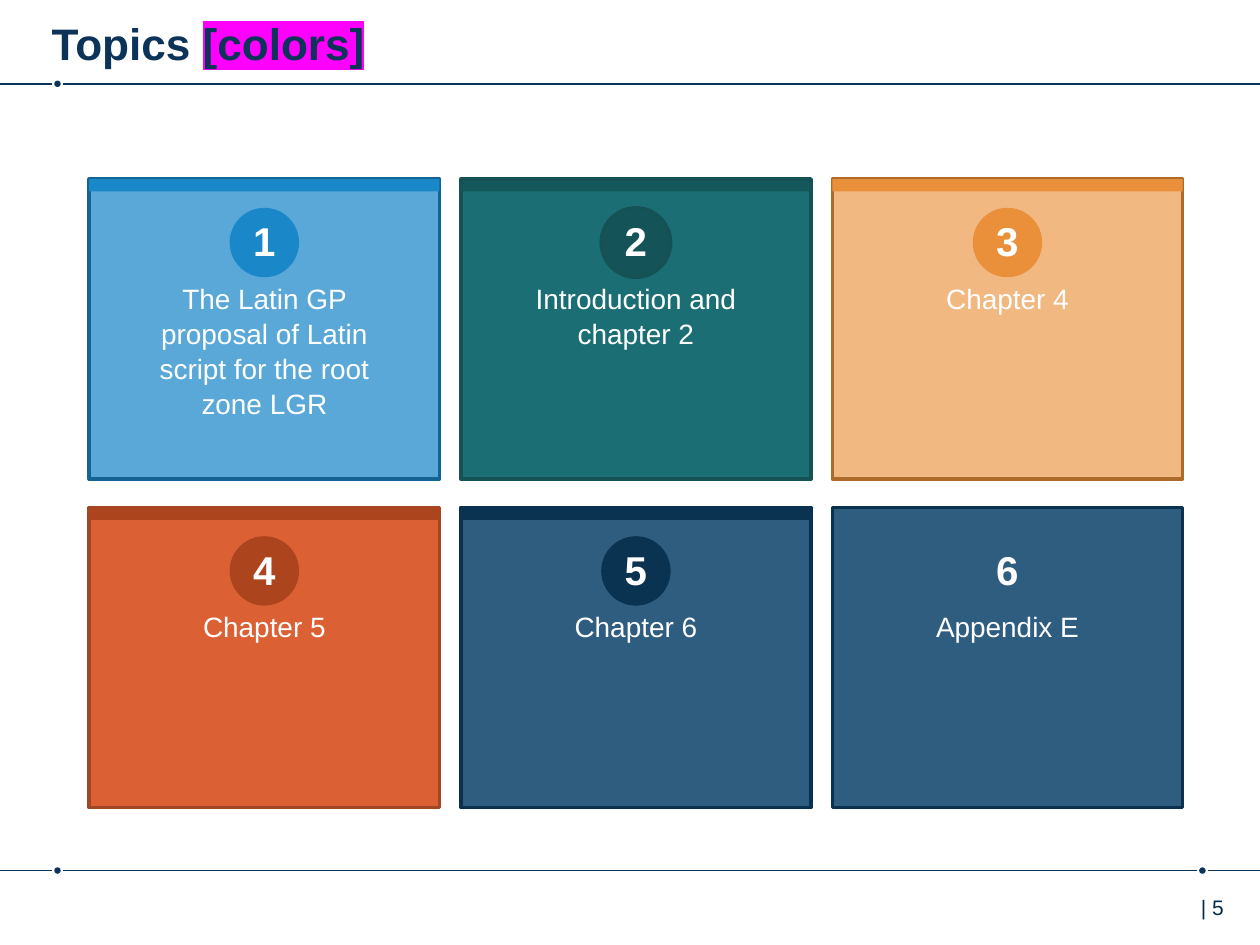
from lxml import etree
from pptx import Presentation
from pptx import util as u
from pptx.dml.color import RGBColor
from pptx.enum import shapes, text
from pptx.oxml.ns import qn

NAVY = RGBColor(0x0C, 0x34, 0x58)
PAGE_INK = RGBColor(0x00, 0x2B, 0x49)
WHITE = RGBColor(0xFF, 0xFF, 0xFF)
BLUE = RGBColor(0x1A, 0x87, 0xC9)
BLUE_EDGE = RGBColor(0x13, 0x64, 0x95)
TEAL = RGBColor(0x1B, 0x6F, 0x74)
TEAL_DARK = RGBColor(0x14, 0x53, 0x57)
TEAL_EDGE = RGBColor(0x14, 0x52, 0x56)
ORANGE = RGBColor(0xEA, 0x90, 0x3A)
ORANGE_EDGE = RGBColor(0xAD, 0x6B, 0x2B)
RED = RGBColor(0xDB, 0x60, 0x33)
RED_DARK = RGBColor(0xAC, 0x44, 0x1E)
RED_EDGE = RGBColor(0xA2, 0x47, 0x26)
STEEL = RGBColor(0x0D, 0x43, 0x6C)
STEEL_DARK = RGBColor(0x0A, 0x32, 0x51)
STEEL_EDGE = RGBColor(0x0A, 0x32, 0x50)

RECTANGLE = shapes.MSO_SHAPE.RECTANGLE
OVAL = shapes.MSO_SHAPE.OVAL

COLUMNS = 3
LEFT, TOP = 1.8, 3.61
PITCH_X, PITCH_Y = 7.49, 6.62
CARD_W, CARD_H = 7.06, 6.05
BAR_H, BADGE = 0.25, 1.4
LABEL_W = 5.76

# label, fill, fill opacity, edge, accent, accent bar opacity, badge edge
CARDS = [
    ("The Latin GP proposal of Latin script for the root zone LGR",
     BLUE, 72, BLUE_EDGE, BLUE, 100, None),
    ("Introduction and chapter 2",
     TEAL, 100, TEAL_EDGE, TEAL_DARK, 80, TEAL_EDGE),
    ("Chapter 4", ORANGE, 63, ORANGE_EDGE, ORANGE, 100, None),
    ("Chapter 5", RED, 100, RED_EDGE, RED_DARK, 100, None),
    ("Chapter 6", STEEL, 86, STEEL_EDGE, STEEL_DARK, 100, None),
    ("Appendix E", STEEL, 86, STEEL_EDGE, None, 100, None),
]


def set_values(target, values):
    for name, value in values.items():
        setattr(target, name, value)


def font_format(size, color, bold=False):
    return {"name": "Arial", "size": u.Pt(size), "bold": bold, "color": color}


def format_font(font, values):
    values = dict(values)
    font.color.rgb = values.pop("color")
    set_values(font, values)


def add_solid(page, kind, left, top, width, height, fill, opacity=100, edge=None):
    shape = page.shapes.add_shape(
        kind, u.Cm(left), u.Cm(top), u.Cm(width), u.Cm(height))
    shape.shadow.inherit = False
    shape.fill.solid()
    shape.fill.fore_color.rgb = fill
    if opacity < 100:
        color = shape.fill._xPr.find(qn("a:solidFill"))[0]
        etree.SubElement(color, qn("a:alpha"), val=str(opacity * 1000))
    if edge is None:
        shape.line.fill.background()
    else:
        shape.line.color.rgb = edge
        shape.line.width = u.Pt(2)


def add_label(page, wording, left, top, width, height, font, frame=None, para=None):
    box = page.shapes.add_textbox(
        u.Cm(left), u.Cm(top), u.Cm(width), u.Cm(height))
    set_values(box.text_frame, {"word_wrap": True, **(frame or {})})
    paragraph = box.text_frame.paragraphs[0]
    set_values(paragraph, para or {"alignment": text.PP_ALIGN.CENTER})
    span = paragraph.add_run()
    span.text = wording
    format_font(span.font, font)


def add_rule(page, start, end, y):
    line = page.shapes.add_connector(
        shapes.MSO_CONNECTOR.STRAIGHT, u.Cm(start), u.Cm(y), u.Cm(end), u.Cm(y))
    line.line.color.rgb = NAVY
    line.line.width = u.Pt(1)
    etree.SubElement(line._element.spPr, qn("a:effectLst"))


def add_dotted_rule(page, y, dots):
    """Draw a full-width rule that breaks around a dot at each given centre."""
    start = 0
    for x in dots:
        add_rule(page, start, x - 0.12, y)
        add_solid(page, OVAL, x - 0.065, y - 0.065, 0.13, 0.13, NAVY)
        start = x + 0.12
    add_rule(page, start, 25.4, y)


def add_card(page, index, label, fill, opacity, edge, accent, bar_opacity, badge_edge):
    row, column = divmod(index, COLUMNS)
    left, top = LEFT + column * PITCH_X, TOP + row * PITCH_Y
    add_solid(page, RECTANGLE, left, top, CARD_W, CARD_H, fill, opacity, edge)
    if accent is not None:
        add_solid(page, RECTANGLE, left, top, CARD_W, BAR_H, accent, bar_opacity)
        add_solid(page, OVAL, left + (CARD_W - BADGE) / 2, top + 0.58,
                  BADGE, BADGE, accent, edge=badge_edge)
    add_label(page, label, left + (CARD_W - LABEL_W) / 2, top + 1.9, LABEL_W, 3,
              font_format(16, WHITE),
              para={"alignment": text.PP_ALIGN.CENTER, "line_spacing": 1.05})
    add_label(page, str(index + 1), left, top + 0.62, CARD_W, 1.24,
              font_format(23, WHITE, True),
              {"vertical_anchor": text.MSO_ANCHOR.MIDDLE})


def fill_title(title):
    set_values(title, {"left": u.Cm(1.04), "top": u.Cm(0.13),
                       "width": u.Cm(22.25), "height": u.Cm(1.24)})
    frame = title.text_frame
    set_values(frame, {"margin_left": 0, "margin_right": 0,
                       "margin_top": u.Cm(0.2), "margin_bottom": 0,
                       "auto_size": text.MSO_AUTO_SIZE.NONE,
                       "vertical_anchor": text.MSO_ANCHOR.TOP})
    paragraph = frame.paragraphs[0]
    paragraph.alignment = text.PP_ALIGN.LEFT
    for wording in ("Topics ", "[colors]"):
        span = paragraph.add_run()
        span.text = wording
        format_font(span.font, font_format(25.2, NAVY, True))
    highlight = etree.Element(qn("a:highlight"))
    etree.SubElement(highlight, qn("a:srgbClr"), val="FF00FF")
    span.font._element.find(qn("a:solidFill")).addnext(highlight)


def main():
    deck = Presentation()
    set_values(deck, {"slide_width": u.Cm(25.4), "slide_height": u.Cm(19.05)})
    page = deck.slides.add_slide(deck.slide_layouts[5])
    fill_title(page.shapes.title)
    add_dotted_rule(page, 1.69, [1.16])
    add_dotted_rule(page, 17.55, [1.16, 24.24])
    add_label(page, "| 5", 23.6, 17.91, 2.2, 1.02, font_format(12, PAGE_INK),
              {"margin_left": u.Cm(0.61)}, {"alignment": text.PP_ALIGN.LEFT})
    for index, card in enumerate(CARDS):
        add_card(page, index, *card)
    deck.save("out.pptx")


if __name__ == "__main__":
    main()
